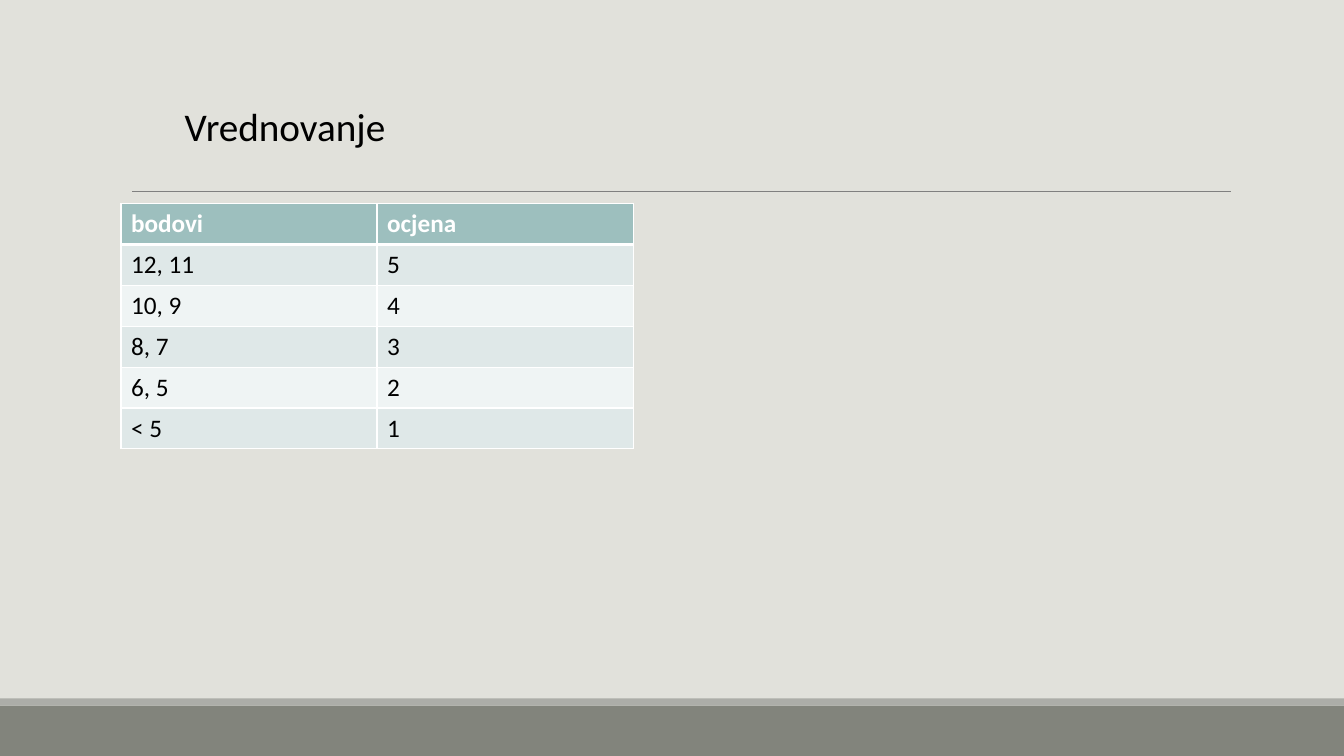
"""Build the grading slide with its table of points and grades."""
import pptx
import pptx.dml.color
import pptx.enum.shapes
import pptx.enum.text
import pptx.oxml
import pptx.oxml.ns
import pptx.util

Inches = pptx.util.Inches
Pt = pptx.util.Pt
RGBColor = pptx.dml.color.RGBColor

PAPER = RGBColor(0xE1, 0xE1, 0xDB)
BASE = RGBColor(0x82, 0x84, 0x7C)
STRIPE = RGBColor(0xAC, 0xAD, 0xA8)
RULE = RGBColor(0x80, 0x80, 0x80)
HEAD = RGBColor(0x9D, 0xBF, 0xBE)
BANDS = (RGBColor(0xDF, 0xE8, 0xE8), RGBColor(0xEF, 0xF4, 0xF4))
WHITE = RGBColor(0xFF, 0xFF, 0xFF)
BLACK = RGBColor(0, 0, 0)

GRADES = (
    ("bodovi", "ocjena"),
    ("12, 11", "5"),
    ("10, 9", "4"),
    ("8, 7", "3"),
    ("6, 5", "2"),
    ("< 5", "1"),
)


def set_all(item, values):
    for name, value in values.items():
        setattr(item, name, value)


def style_text(frame, size, color, bold=False):
    para = frame.paragraphs[0]
    para.alignment = pptx.enum.text.PP_ALIGN.LEFT
    font = para.runs[0].font
    set_all(font, {"name": "Calibri", "size": Pt(size), "bold": bold})
    font.color.rgb = color


def add_bar(slide, top, height, color):
    kind = pptx.enum.shapes.MSO_SHAPE.RECTANGLE
    bar = slide.shapes.add_shape(
        kind, 0, Inches(top), Inches(13.33), Inches(height))
    bar.shadow.inherit = False
    bar.fill.solid()
    bar.fill.fore_color.rgb = color
    bar.line.fill.background()


def add_rule(slide, left, right, top):
    kind = pptx.enum.shapes.MSO_CONNECTOR.STRAIGHT
    rule = slide.shapes.add_connector(
        kind, Inches(left), Inches(top), Inches(right), Inches(top))
    rule.line.color.rgb = RULE
    rule.line.width = Pt(0.5)
    props = rule._element.spPr
    props.append(pptx.oxml.parse_xml(
        f'<a:effectLst {pptx.oxml.ns.nsdecls("a")}/>'))


def set_title(slide, text):
    title = slide.shapes.title
    set_all(title, {
        "left": Inches(1.73), "top": Inches(0.96),
        "width": Inches(3.73), "height": Inches(0.57)})
    frame = title.text_frame
    set_all(frame, {
        "text": text, "word_wrap": True,
        "vertical_anchor": pptx.enum.text.MSO_ANCHOR.TOP})
    style_text(frame, 28, BLACK)


def add_edge(cell, side, width):
    cell._tc.get_or_add_tcPr().append(pptx.oxml.parse_xml(
        f'<a:ln{side} {pptx.oxml.ns.nsdecls("a")} w="{Pt(width)}">'
        f'<a:solidFill><a:srgbClr val="{WHITE}"/></a:solidFill>'
        f'</a:ln{side}>'))


def fill_cell(cell, text, row):
    head = row == 0
    cell.text = text
    style_text(cell.text_frame, 18, WHITE if head else BLACK, head)
    for side in "LRTB":
        thick = (side == "B" and head) or (side == "T" and row == 1)
        add_edge(cell, side, 3 if thick else 1)
    cell.fill.solid()
    cell.fill.fore_color.rgb = HEAD if head else BANDS[(row - 1) % 2]


def add_grades(slide):
    rows, cols = len(GRADES), len(GRADES[0])
    table = slide.shapes.add_table(
        rows, cols, Inches(1.2), Inches(2.02),
        Inches(2.54 * cols), Inches(0.405 * rows)).table
    for row, texts in enumerate(GRADES):
        for col, text in enumerate(texts):
            fill_cell(table.cell(row, col), text, row)


def main():
    deck = pptx.Presentation()
    set_all(deck, {"slide_width": Inches(13.33), "slide_height": Inches(7.5)})
    slide = deck.slides.add_slide(deck.slide_layouts[5])
    slide.background.fill.solid()
    slide.background.fill.fore_color.rgb = PAPER
    add_bar(slide, 7, 0.5, BASE)
    add_bar(slide, 6.93, 0.07, STRIPE)
    add_rule(slide, 1.31, 12.21, 1.9)
    add_grades(slide)
    set_title(slide, "Vrednovanje")
    deck.save("out.pptx")


if __name__ == "__main__":
    main()
